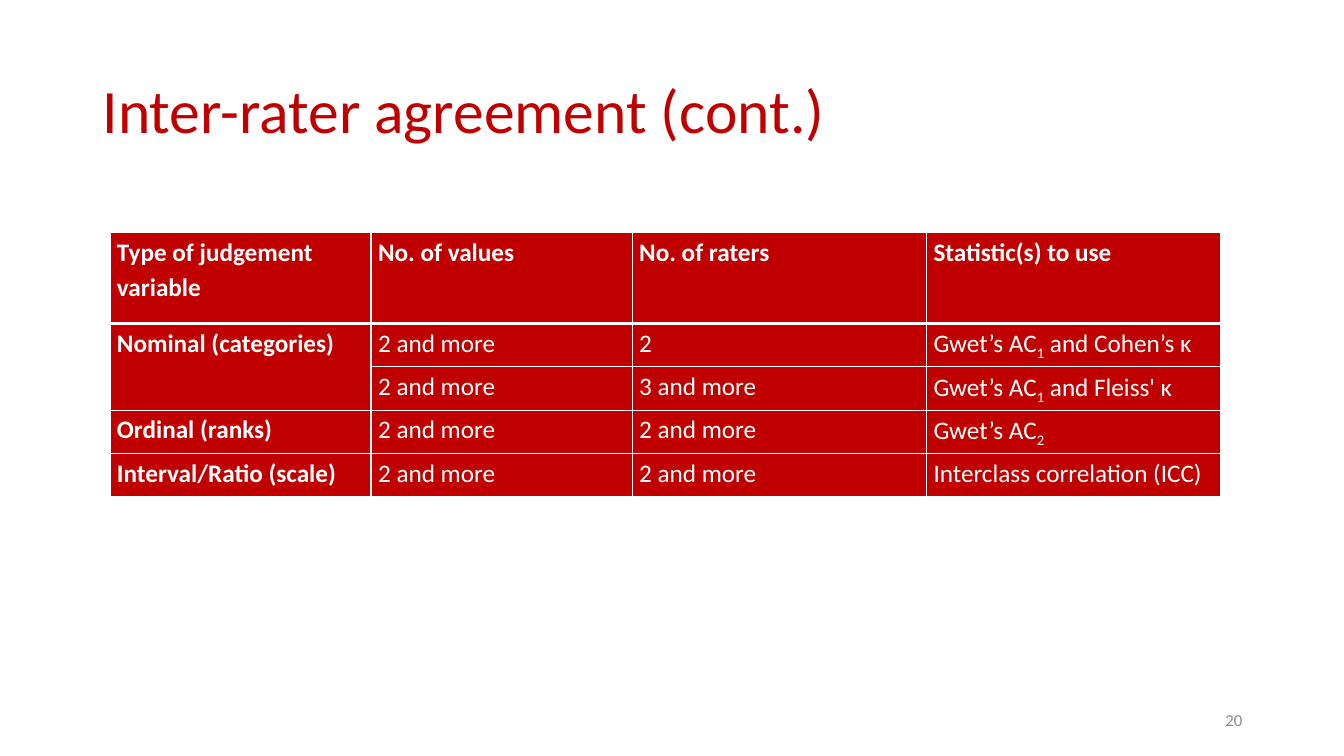
from lxml import etree
from pptx import Presentation, util as u
from pptx.dml.color import RGBColor
from pptx.enum import text
from pptx.oxml import ns

RED = RGBColor(0xC0, 0x00, 0x00)
WHITE = RGBColor(0xFF, 0xFF, 0xFF)
GRAY = RGBColor(0x8C, 0x8C, 0x8C)
FONT = "Calibri"
WIDE, HIGH = 13.33, 7.5
COLS = [2.59, 2.59, 2.92, 2.92]
ROWS = [0.9] + [0.43] * 4
# An underscore puts the next character in subscript.
CELLS = [
    ["Type of judgement variable", "No. of values", "No. of raters", "Statistic(s) to use"],
    ["Nominal (categories)", "2 and more", "2", "Gwet’s AC_1 and Cohen’s κ"],
    ["", "2 and more", "3 and more", "Gwet’s AC_1 and Fleiss' κ"],
    ["Ordinal (ranks)", "2 and more", "2 and more", "Gwet’s AC_2"],
    ["Interval/Ratio (scale)", "2 and more", "2 and more", "Interclass correlation (ICC)"],
]
LEFT_CELLS = {(0, 0), (1, 3)}


def style(para, size, color, bold=False):
    font = para.font
    font.name, font.size, font.bold = FONT, u.Pt(size), bold
    font.color.rgb = color


def add_label(slide, words, box, size, color, align):
    box = slide.shapes.add_textbox(*(u.Inches(n) for n in box))
    frame = box.text_frame
    frame.word_wrap = True
    frame.vertical_anchor = text.MSO_ANCHOR.MIDDLE
    para = frame.paragraphs[0]
    para.text, para.alignment = words, align
    para.line_spacing = 0.9
    style(para, size, color)


def add_runs(para, words):
    """Write words as runs, with subscripts where marked."""
    base, mark, rest = words.partition("_")
    for part, low in ((base, False), (rest[:1], True), (rest[1:], False)):
        if part:
            run = para.add_run()
            run.text = part
            if low:
                run.font._element.set("baseline", "-25000")


def add_edges(cell, top, foot):
    """Draw white cell borders; top and foot are widths in points."""
    props = cell._tc.get_or_add_tcPr()
    for side, width in (("L", 1), ("R", 1), ("T", top), ("B", foot)):
        line = etree.SubElement(props, ns.qn(f"a:ln{side}"), w=str(u.Pt(width)))
        fill = etree.SubElement(line, ns.qn("a:solidFill"))
        etree.SubElement(fill, ns.qn("a:srgbClr"), val=str(WHITE))


def fill_cell(cell, words, row, col):
    add_edges(cell, 3 if row == 1 else 1, 3 if row == 0 else 1)
    cell.fill.solid()
    cell.fill.fore_color.rgb = RED
    cell.margin_left = cell.margin_right = u.Inches(0.07)
    cell.margin_top = cell.margin_bottom = 0
    para = cell.text_frame.paragraphs[0]
    align = text.PP_ALIGN
    para.alignment = align.LEFT if (row, col) in LEFT_CELLS else align.JUSTIFY
    para.line_spacing, para.space_after = 1.15, u.Pt(10)
    style(para, 18, WHITE, row == 0 or col == 0)
    add_runs(para, words)


def add_grid(slide, left, top):
    size = (left, top, sum(COLS), sum(ROWS))
    frame = slide.shapes.add_table(len(ROWS), len(COLS), *(u.Inches(n) for n in size))
    table = frame.table
    for col, width in zip(table.columns, COLS):
        col.width = u.Inches(width)
    for row, height in zip(table.rows, ROWS):
        row.height = u.Inches(height)
    for r, line in enumerate(CELLS):
        for c, words in enumerate(line):
            fill_cell(table.cell(r, c), words, r, c)
    table.cell(1, 0).merge(table.cell(2, 0))


def main():
    deck = Presentation()
    deck.slide_width, deck.slide_height = u.Inches(WIDE), u.Inches(HIGH)
    slide = deck.slides.add_slide(deck.slide_layouts[6])
    align = text.PP_ALIGN
    add_label(slide, "Inter-rater agreement (cont.)", (0.92, 0.4, 11.5, 1.45), 44, RED, align.LEFT)
    add_grid(slide, 1.09, 2.31)
    add_label(slide, "20", (9.42, 6.95, 3, 0.4), 12, GRAY, align.RIGHT)
    deck.save("out.pptx")


if __name__ == "__main__":
    main()
